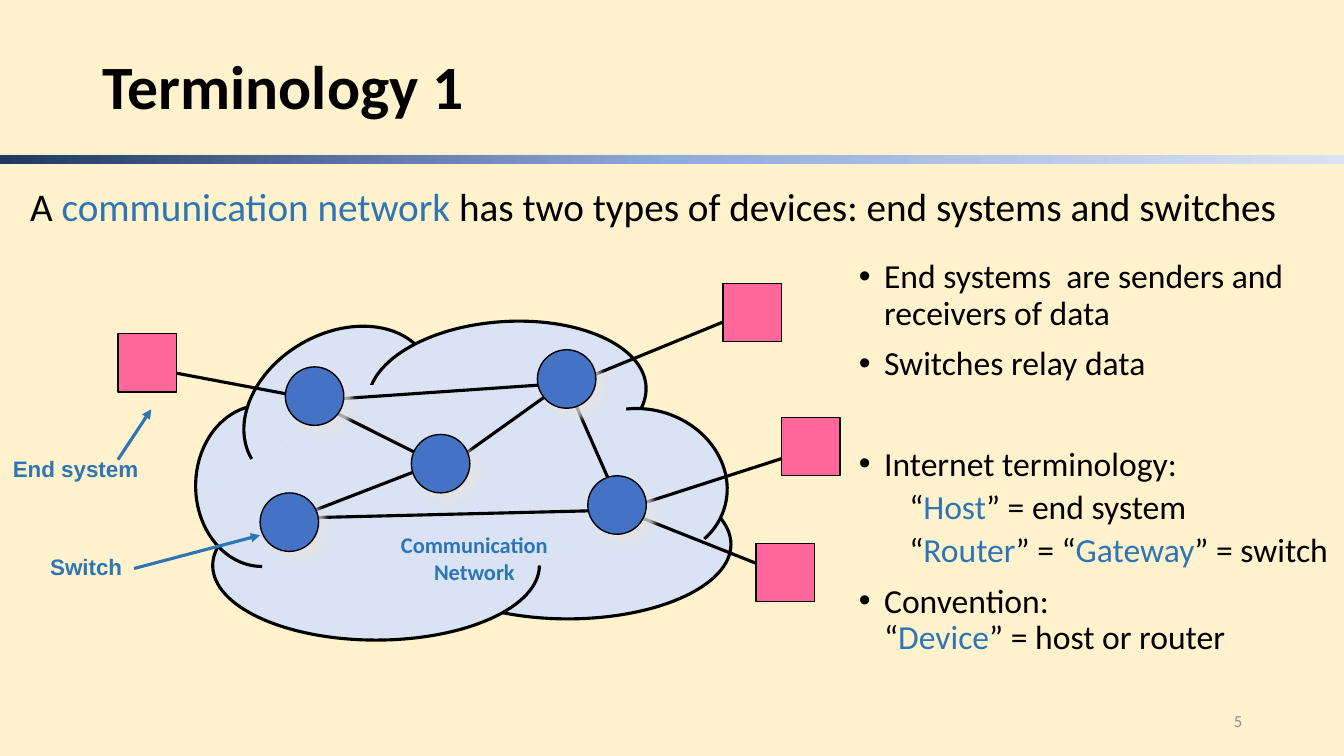
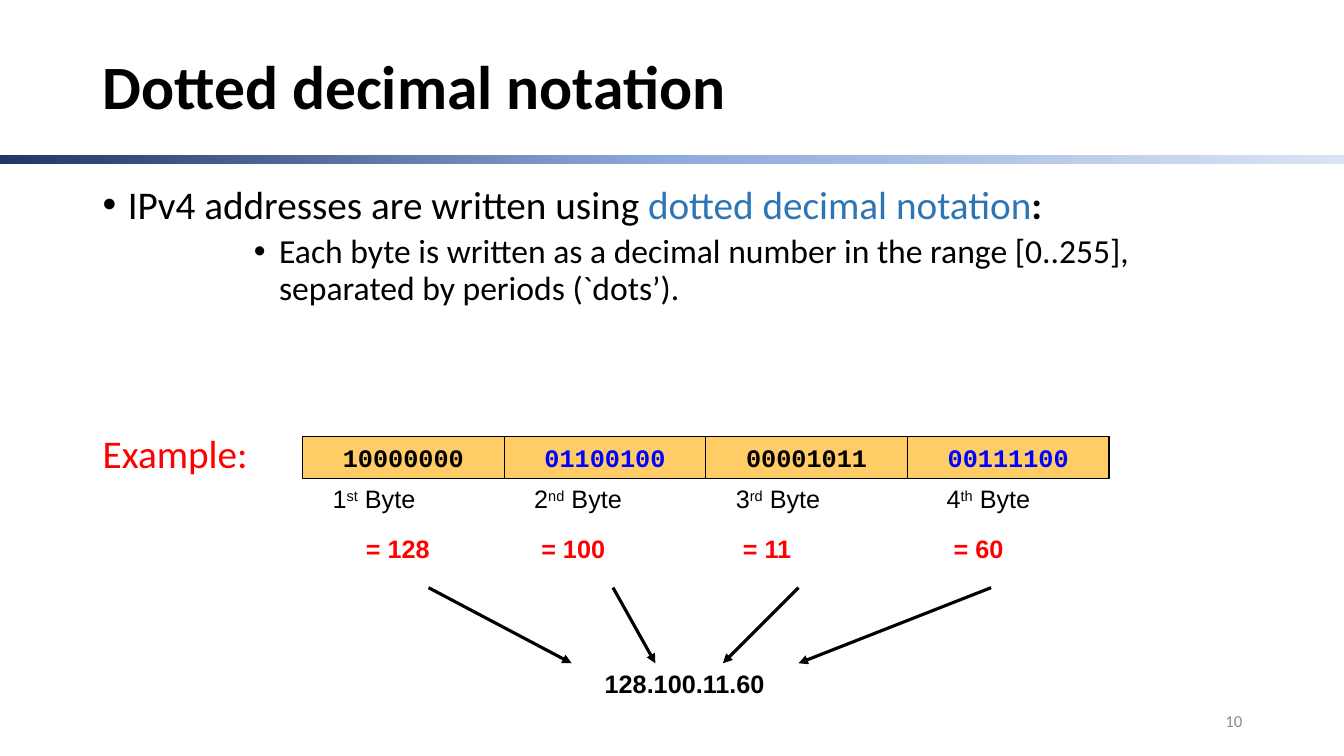
from collections import namedtuple
from copy import deepcopy
from math import cos, radians, sin, tan

from lxml.etree import SubElement
from pptx import Presentation
from pptx.dml.color import RGBColor
from pptx.enum.shapes import MSO_CONNECTOR as Connector, MSO_SHAPE as Preset
from pptx.enum.text import MSO_ANCHOR as Anchor, PP_ALIGN as Align
from pptx.oxml.ns import qn
from pptx.util import Inches, Pt

Box = namedtuple("Box", "left top width height")

BLACK = RGBColor(0x00, 0x00, 0x00)
WHITE = RGBColor(0xFF, 0xFF, 0xFF)
CREAM = RGBColor(0xFF, 0xF2, 0xCC)
TERM_BLUE = RGBColor(0x2E, 0x75, 0xB6)
SWITCH_BLUE = RGBColor(0x44, 0x72, 0xC4)
CLOUD_BLUE = RGBColor(0xDA, 0xE3, 0xF3)
BAND_MIDDLE = RGBColor(0x8F, 0xAA, 0xDC)
BAND_DARK = RGBColor(0x20, 0x38, 0x64)
PINK = RGBColor(0xFF, 0x66, 0x99)
AMBER = RGBColor(0xFF, 0xCC, 0x66)
BIT_BLUE = RGBColor(0x00, 0x00, 0xFF)
RED = RGBColor(0xFF, 0x00, 0x00)
GREY = RGBColor(0x8C, 0x8C, 0x8C)
SHADOW = RGBColor(0xE7, 0xE6, 0xE6)

NODE = 0.58
TERM = {"color": TERM_BLUE}
TITLE = {"name": "Calibri", "size": Pt(44), "bold": True, "color": BLACK}
LEAD = {"name": "Calibri", "size": Pt(28), "color": BLACK}
BODY = LEAD | {"size": Pt(24)}
NUMBER = {"name": "Calibri", "size": Pt(12), "color": GREY}
LABEL = {"name": "Arial", "size": Pt(16), "bold": True, "color": TERM_BLUE}
BYTE = {"name": "Arial", "size": Pt(18), "color": BLACK}
BITS = {"name": "Courier New", "size": Pt(18), "bold": True}
TIGHT = {"line_spacing": 0.9}
BULLET = TIGHT | {"bullet": (0.25, -0.25)}
CENTER = {"alignment": Align.CENTER}


def inside(box, left, top, width, height):
    return Box(box.left + left, box.top + top, width, height)


def style_font(font, values):
    for key, value in values.items():
        if key == "color":
            font.color.rgb = value
        elif key == "baseline":
            font._element.set("baseline", value)
        else:
            setattr(font, key, value)


def write_para(para, style, values, spans):
    for key, value in values.items():
        if key in ("bullet", "indent"):
            props = para._p.get_or_add_pPr()
            for name, length in zip(("marL", "indent"), value):
                props.set(name, str(Inches(length)))
            if key == "bullet":
                SubElement(props, qn("a:buFont"), {"typeface": "Arial"})
                SubElement(props, qn("a:buChar"), {"char": "•"})
        else:
            setattr(para, key, value)
    for text, change in spans:
        for index, line in enumerate(text.split("\n")):
            if index:
                para.add_line_break()
                para._p[-1].append(deepcopy(span._r.rPr))
            span = para.add_run()
            span.text = line
            style_font(span.font, style | change)


def write(shape, style, paras, anchor=Anchor.TOP, wrap=True):
    frame = shape.text_frame
    frame.word_wrap, frame.vertical_anchor = wrap, anchor
    for index, (values, spans) in enumerate(paras):
        para = frame.add_paragraph() if index else frame.paragraphs[0]
        write_para(para, style, values, spans)


def add_text(page, box, style, paras, anchor=Anchor.TOP):
    shape = page.shapes.add_textbox(*map(Inches, box))
    write(shape, style, paras, anchor)
    return shape


def add_label(page, box, style, text, values=CENTER, anchor=Anchor.TOP):
    return add_text(page, box, style, [(values, [(text, {})])], anchor)


def paint(shape, fill, line, width):
    shape.shadow.inherit = False
    shape.fill.solid()
    shape.fill.fore_color.rgb = fill
    if line is None:
        shape.line.fill.background()
    else:
        shape.line.color.rgb = line
        shape.line.width = Pt(width)


def add_preset(page, preset, box, fill, line=None, width=1):
    shape = page.shapes.add_shape(preset, *map(Inches, box))
    paint(shape, fill, line, width)
    return shape


def add_line(page, box, start, end, color=BLACK, arrow=False):
    ends = [Inches(origin + value)
            for point in (start, end) for origin, value in zip(box, point)]
    line = page.shapes.add_connector(Connector.STRAIGHT, *ends)
    line.line.color.rgb = color
    line.line.width = Pt(2.25)
    if arrow:
        SubElement(line.line._get_or_add_ln(), qn("a:tailEnd"), {"type": "triangle"})
    SubElement(line._element.spPr, qn("a:effectLst"))


def bend(shape, start, curves, middle):
    paths = next(shape._element.spPr.iter(qn("a:pathLst")))
    paths.remove(paths[0])
    size = {"w": str(shape.width), "h": str(shape.height)}
    edge = [("a:moveTo", [start])] + [("a:cubicBezTo", curve) for curve in curves]
    wedge = edge + [("a:lnTo", [middle]), ("a:close", [])]
    for mode, steps in (({"fill": "none"}, edge), ({"stroke": "0"}, wedge)):
        outline = SubElement(paths, qn("a:path"), size | mode)
        for tag, points in steps:
            step = SubElement(outline, qn(tag))
            for x, y in points:
                SubElement(step, qn("a:pt"),
                           {"x": str(x - shape.left), "y": str(y - shape.top)})


def add_puff(page, box, center, radii, turn, first, last):
    tilt = radians(turn)

    def place(across, down):
        across, down = across * radii[0], down * radii[1]
        return (Inches(box.left + center[0] + across * cos(tilt) - down * sin(tilt)),
                Inches(box.top + center[1] + across * sin(tilt) + down * cos(tilt)))

    quarters = [angle for angle in (270, 180, 90, 0) if first < angle < last]
    stops = [radians(angle) for angle in (last, *quarters, first)]
    curves = []
    for a, b in zip(stops, stops[1:]):
        pull = 4 / 3 * tan((b - a) / 4)
        curves.append([place(cos(a) - pull * sin(a), sin(a) + pull * cos(a)),
                       place(cos(b) + pull * sin(b), sin(b) - pull * cos(b)),
                       place(cos(b), sin(b))])
    start, middle = place(cos(stops[0]), sin(stops[0])), place(0, 0)
    builder = page.shapes.build_freeform(*start)
    builder.add_line_segments([curve[-1] for curve in curves] + [middle])
    puff = builder.convert_to_shape()
    paint(puff, CLOUD_BLUE, BLACK, 2.25)
    bend(puff, start, curves, middle)


def add_cloud(page, box):
    add_preset(page, Preset.RECTANGLE, inside(box, 2.6, 1.95, 4.19, 1.37), CLOUD_BLUE)
    for puff in (
        ((5.63, 2.9), (1.62, 0.74), 0, -26, 114),
        ((3.73, 3.11), (1.62, 0.74), 0, 0, 209),
        ((2.6, 2.32), (0.66, 0.8), 0, 90, 300),
        ((3.36, 1.55), (1, 0.74), 149.8, 0, 235),
        ((5.03, 1.42), (1.38, 0.73), 176.4, 0, 236),
        ((6.37, 2.3), (0.85, 0.74), 194.9, 37, 210),
    ):
        add_puff(page, box, *puff)
    add_preset(page, Preset.RECTANGLE, inside(box, 2.79, 1.32, 3.42, 1.37), CLOUD_BLUE)


def add_switch(page, box):
    circle = add_preset(page, Preset.OVAL, box, SWITCH_BLUE, BLACK)
    effects = circle._element.spPr.find(qn("a:effectLst"))
    shade = SubElement(effects, qn("a:outerShdw"), {
        "blurRad": str(Pt(5)), "dist": str(Pt(8.5)), "dir": str(45 * 60000)})
    color = SubElement(shade, qn("a:srgbClr"), {"val": str(SHADOW)})
    SubElement(color, qn("a:alpha"), {"val": "75000"})


def add_network(page, box):
    add_cloud(page, box)
    for start, end in (
        ((2.92, 2.64), (6.17, 2.56)), ((5.58, 1.22), (6.17, 2.56)),
        ((4.42, 2.14), (3.08, 1.47)), ((4.42, 2.14), (5.58, 1.31)),
        ((2.92, 2.64), (4.42, 2.06)), ((5.5, 1.31), (3.17, 1.47)),
        ((3.17, 1.47), (1.42, 1.14)), ((7.5, 0.56), (5.67, 1.31)),
        ((8, 1.97), (6.17, 2.56)), ((7.83, 3.22), (6.17, 2.56)),
    ):
        add_line(page, box, start, end)
    for left, top in ((4.08, 1.81), (2.58, 2.39), (5.33, 0.97), (5.83, 2.22), (2.83, 1.14)):
        add_switch(page, inside(box, left, top, NODE, NODE))
    for left, top in ((1.17, 0.81), (7.17, 0.31), (7.75, 1.64), (7.5, 2.89)):
        add_preset(page, Preset.RECTANGLE, inside(box, left, top, NODE, NODE), PINK, BLACK)
    add_label(page, inside(box, 3.33, 2.72, 2.75, 0.64),
              LABEL | {"name": "Calibri"}, "Communication\nNetwork")
    add_label(page, inside(box, 0, 1.97, 1.5, 0.37), LABEL, "End system")
    add_label(page, inside(box, 0.27, 2.94, 1.17, 0.37), LABEL, "Switch")
    add_line(page, box, (1.17, 2.06), (1.5, 1.56), TERM_BLUE, True)
    add_line(page, box, (1.33, 3.14), (2.58, 2.81), TERM_BLUE, True)


def add_address(page, box):
    columns = (
        ("10000000", BLACK, "1", "st", "= 128", 0.2, 0.53, 1.25, 2.67),
        ("01100100", BIT_BLUE, "2", "nd", "= 100", 2.2, 2.27, 3.08, 3.5),
        ("00001011", BLACK, "3", "rd", "= 11", 4.2, 4.27, 4.92, 4.17),
        ("00111100", BIT_BLUE, "4", "th", "= 60", 6.29, 6.36, 6.83, 4.92),
    )
    width = box.width / len(columns)
    for index, column in enumerate(columns):
        bits, color, digit, suffix, value, name_left, value_left, start, tip = column
        cell = add_preset(page, Preset.RECTANGLE,
                          inside(box, index * width, 0, width, 0.42), AMBER, BLACK, 0.75)
        write(cell, BITS | {"color": color}, [(CENTER, [(bits, {})])], Anchor.MIDDLE, False)
        name = [(digit, {}), (suffix, {"baseline": "30000"}), (" Byte", {})]
        add_text(page, inside(box, name_left, 0.42, 1.42, 0.4), BYTE, [({}, name)])
        add_label(page, inside(box, value_left, 0.91, 1.42, 0.4),
                  BYTE | {"bold": True, "color": RED}, value, {})
        add_line(page, box, (start, 1.5), (tip, 2.25), arrow=True)
    add_label(page, inside(box, 2, 2.25, 3.58, 0.4), BYTE | {"bold": True}, "128.100.11.60")


def add_band(page, box):
    band = add_preset(page, Preset.RECTANGLE, box, CLOUD_BLUE)
    band.fill.gradient()
    band.fill.gradient_angle = 0
    stops = next(band._element.spPr.iter(qn("a:gsLst")))
    for stop in list(stops):
        stops.remove(stop)
    for place, color in (("0", BAND_DARK), ("50000", BAND_MIDDLE), ("100000", CLOUD_BLUE)):
        stop = SubElement(stops, qn("a:gs"), {"pos": place})
        SubElement(stop, qn("a:srgbClr"), {"val": str(color)})


def add_page(deck, title, number, color):
    page = deck.slides.add_slide(deck.slide_layouts[6])
    page.background.fill.solid()
    page.background.fill.fore_color.rgb = color
    add_band(page, Box(0, 1.54, 13.33, 0.09))
    heading = add_label(page, Box(0.92, 0.4, 11.5, 0.97), TITLE, title, TIGHT, Anchor.MIDDLE)
    if color != WHITE:
        heading.fill.solid()
        heading.fill.fore_color.rgb = color
    add_label(page, Box(9.42, 6.95, 3, 0.4), NUMBER, number,
              {"alignment": Align.RIGHT}, Anchor.MIDDLE)
    return page


def build_terminology(deck):
    page = add_page(deck, "Terminology 1", "5", CREAM)
    spaced = BULLET | {"space_before": Pt(10)}
    inner = TIGHT | {"indent": (0.5, 0), "space_before": Pt(5)}
    add_text(page, Box(8.42, 2.53, 5.09, 4.97), BODY, [
        (BULLET, [("End systems  are senders and receivers of data", {})]),
        (spaced, [("Switches relay data", {})]),
        (BULLET | {"space_before": Pt(46)}, [("Internet terminology:", {})]),
        (inner, [("“", {}), ("Host", TERM), ("” = end system", {})]),
        (inner, [("“", {}), ("Router", TERM), ("” = “", {}),
                 ("Gateway", TERM), ("” = switch", {})]),
        (spaced, [("Convention:\n“", {}), ("Device", TERM), ("” = host or router", {})]),
    ])
    add_text(page, Box(0.2, 1.81, 12.93, 0.74), LEAD, [
        (TIGHT, [("A ", {}), ("communication network ", TERM),
                 ("has two types of devices: end systems and switches", {})])])
    add_network(page, Box(0, 2.5, 8.42, 4))


def build_notation(deck):
    page = add_page(deck, "Dotted decimal notation", "10", WHITE)
    detail = TIGHT | {"bullet": (1.75, -0.25), "space_before": Pt(5)}
    add_text(page, Box(0.92, 1.79, 11.5, 4.97), LEAD, [
        (BULLET, [("IPv4 addresses are written using ", {}),
                  ("dotted decimal notation", TERM), (":", {"bold": True})]),
        (detail, [("Each byte is written as a decimal number in the range [0..255], "
                   "separated by periods (`dots’).", {"size": Pt(24)})]),
        (TIGHT | {"space_before": Pt(91)}, [("Example:", {"color": RED})]),
    ])
    add_address(page, Box(3, 4.33, 8, 2.65))


deck = Presentation()
deck.slide_width, deck.slide_height = Inches(13.33), Inches(7.5)
build_terminology(deck)
build_notation(deck)
deck.save("out.pptx")
